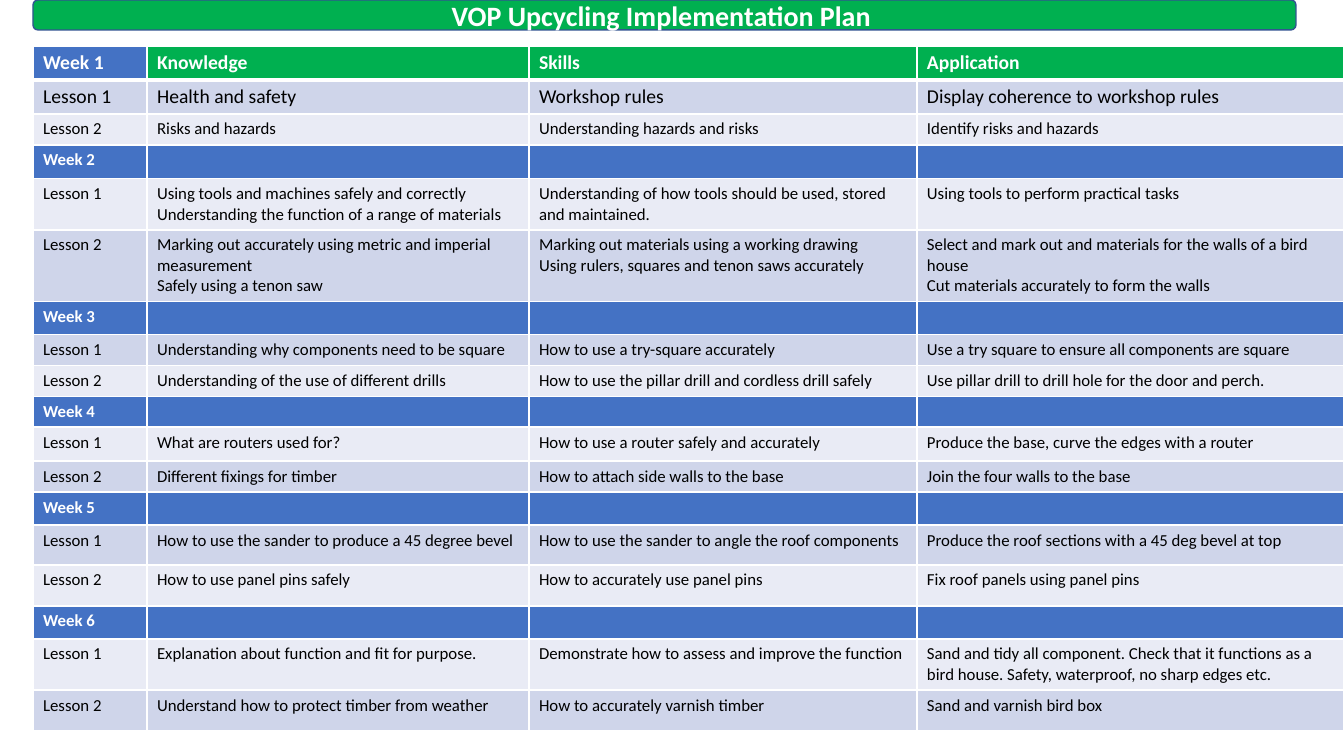
"""Build the upcycling implementation plan: a title bar above a six-week lesson table."""
from lxml import etree
from pptx import Presentation
from pptx import util as u
from pptx.dml.color import RGBColor
from pptx.enum import shapes, text
from pptx.oxml import ns

TITLE = "VOP Upcycling Implementation Plan "
HEADINGS = ("Knowledge", "Skills", "Application")
WEEKS = [
    [("Health and safety", "Workshop rules", "Display coherence to workshop rules"),
     ("Risks and hazards", "Understanding hazards and risks", "Identify risks and hazards")],
    [("Using tools and machines safely and correctly\n"
      "Understanding the function of a range of materials",
      "Understanding of how tools should be used, stored and maintained.",
      "Using tools to perform practical tasks"),
     ("Marking out accurately using metric and imperial measurement\n"
      "Safely using a tenon saw",
      "Marking out materials using a working drawing\n"
      "Using rulers, squares and tenon saws accurately",
      "Select and mark out and materials for the walls of a bird house\n"
      "Cut materials accurately to form the walls")],
    [("Understanding why components need to be square", "How to use a try-square accurately",
      "Use a try square to ensure all components are square"),
     ("Understanding of the use of different drills",
      "How to use the pillar drill and cordless drill safely",
      "Use pillar drill to drill hole for the door and perch.")],
    [("What are routers used for?", "How to use a router safely and accurately",
      "Produce the base, curve the edges with a router"),
     ("Different fixings for timber", "How to attach side walls to the base",
      "Join the four walls to the base")],
    [("How to use the sander to produce a 45 degree bevel",
      "How to use the sander to angle the roof components",
      "Produce the roof sections with a 45 deg bevel at top"),
     ("How to use panel pins safely", "How to accurately use panel pins",
      "Fix roof panels using panel pins")],
    [("Explanation about function and fit for purpose.",
      "Demonstrate how to assess and improve the function",
      "Sand and tidy all component. Check that it functions as a bird house. "
      "Safety, waterproof, no sharp edges etc."),
     ("Understand how to protect timber from weather", "How to accurately varnish timber",
      "Sand and varnish bird box")],
]
COLUMN_WIDTHS = (114, 382, 388, 427)
ROW_HEIGHTS = (33, 34, 31, 34, 51, 71, 33, 31, 30, 31, 34, 31, 33, 40, 41, 33, 51, 41)
LEFT, TABLE_TOP, BAR_WIDTH, BAR_HEIGHT = 33, 46, 1263, 30
COLORS = {"green": "00B050", "blue": "4472C4", "outline": "325491", "white": "FFFFFF",
          "black": "000000", "band": "CFD5EA", "light": "E9EBF5"}
FONT = "Calibri"


def px(length):
    return u.Emu(round(length * 914400 / 100.8))


def color(name):
    return RGBColor.from_string(COLORS[name])


def write(frame, words, size=12, ink="black", bold=False, align=text.PP_ALIGN.LEFT):
    for index, line in enumerate(words.split("\n")):
        paragraph = frame.add_paragraph() if index else frame.paragraphs[0]
        paragraph.alignment = align
        if line:
            run = paragraph.add_run()
            run.text = line
            run.font.name, run.font.size, run.font.bold = FONT, u.Pt(size), bold
            run.font.color.rgb = color(ink)
        else:
            etree.SubElement(paragraph._p, ns.qn("a:endParaRPr"), sz=str(size * 100))


def add_borders(cell, top=1, bottom=1):
    properties = cell._tc.get_or_add_tcPr()
    for side, points in (("L", 1), ("R", 1), ("T", top), ("B", bottom)):
        line = etree.SubElement(properties, ns.qn(f"a:ln{side}"), w=str(u.Pt(points)))
        fill = etree.SubElement(line, ns.qn("a:solidFill"))
        etree.SubElement(fill, ns.qn("a:srgbClr"), val=COLORS["white"])


def add_title_bar(slide):
    bar = slide.shapes.add_shape(shapes.MSO_SHAPE.ROUNDED_RECTANGLE,
                                 px(LEFT), 0, px(BAR_WIDTH), px(BAR_HEIGHT))
    bar.shadow.inherit = False
    bar.fill.solid()
    bar.fill.fore_color.rgb = color("green")
    bar.line.color.rgb = color("outline")
    bar.line.width = u.Pt(1)
    bar.text_frame.word_wrap = True
    bar.text_frame.vertical_anchor = text.MSO_ANCHOR.MIDDLE
    write(bar.text_frame, TITLE, size=20, ink="white", bold=True, align=text.PP_ALIGN.CENTER)


def plan_rows():
    rows = []
    for number, lessons in enumerate(WEEKS, 1):
        rows.append((f"Week {number}", *(HEADINGS if number == 1 else ("", "", ""))))
        rows += [(f"Lesson {index}", *lesson) for index, lesson in enumerate(lessons, 1)]
    return rows


def add_plan(slide):
    rows = plan_rows()
    table = slide.shapes.add_table(len(rows), len(COLUMN_WIDTHS), px(LEFT), px(TABLE_TOP),
                                   px(sum(COLUMN_WIDTHS)), px(sum(ROW_HEIGHTS))).table
    for column, width in zip(table.columns, COLUMN_WIDTHS):
        column.width = px(width)
    for r, (row, height) in enumerate(zip(rows, ROW_HEIGHTS)):
        table.rows[r].height = px(height)
        is_week = row[0].startswith("Week")
        for c, words in enumerate(row):
            cell = table.cell(r, c)
            add_borders(cell, top=3 if r == 1 else 1, bottom=3 if r == 0 else 1)
            if is_week:
                background = "green" if r == 0 and c else "blue"
            else:
                background = "band" if r % 2 else "light"
            cell.fill.solid()
            cell.fill.fore_color.rgb = color(background)
            write(cell.text_frame, words, size=14 if r < 2 else 12,
                  ink="white" if is_week else "black", bold=is_week)


def main():
    presentation = Presentation()
    presentation.slide_width, presentation.slide_height = px(1344), px(756)
    slide = presentation.slides.add_slide(presentation.slide_layouts[6])
    add_plan(slide)
    add_title_bar(slide)
    presentation.save("out.pptx")


if __name__ == "__main__":
    main()
